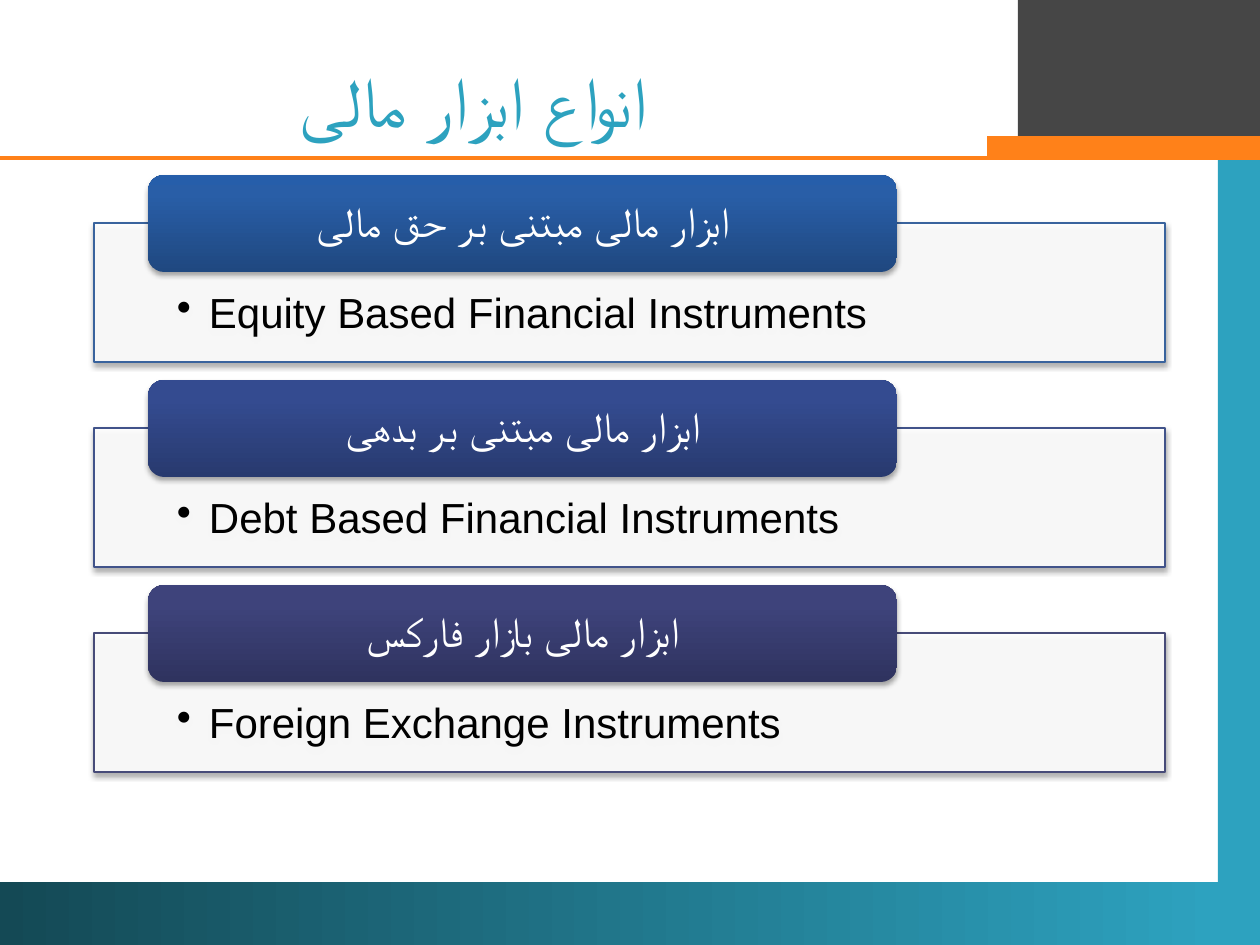
from dataclasses import dataclass

from lxml import etree
from pptx import Presentation
from pptx.dml.color import RGBColor
from pptx.enum.shapes import MSO_CONNECTOR, MSO_SHAPE
from pptx.enum.text import MSO_ANCHOR, PP_ALIGN
from pptx.oxml.ns import qn
from pptx.util import Pt

RECT, ROUND = MSO_SHAPE.RECTANGLE, MSO_SHAPE.ROUNDED_RECTANGLE
STRAIGHT = MSO_CONNECTOR.STRAIGHT
TOP, MIDDLE = MSO_ANCHOR.TOP, MSO_ANCHOR.MIDDLE
LEFT, CENTER = PP_ALIGN.LEFT, PP_ALIGN.CENTER
SCALE = 914400 / 126


@dataclass(frozen=True)
class Theme:
    """Colours and type sizes of the slide."""
    font: str = "Arial"
    title_size: int = 40
    body_size: int = 24
    teal: str = "2DA2BF"
    deep_teal: str = "144955"
    orange: str = "FF8119"
    charcoal: str = "464646"
    white: str = "FFFFFF"
    black: str = "000000"


THEME = Theme()
SECTIONS = [
    ("ابزار مالی مبتنی بر حق مالی", "Equity Based Financial Instruments",
     "39639D", ("1F4880", "295EA7", "265EAA")),
    ("ابزار مالی مبتنی بر بدهی", "Debt Based Financial Instruments",
     "41538A", ("283A6F", "344B90", "324B93")),
    ("ابزار مالی بازار فارکس", "Foreign Exchange Instruments",
     "474B78", ("2F335F", "3E437B", "3D427D")),
]


def px(*values):
    """Turn pixel lengths into a list of EMU lengths."""
    return [round(v * SCALE) for v in values]


def add(parent, tag, **attrs):
    """Append a DrawingML element and return it."""
    return etree.SubElement(parent, qn(tag), {k: str(v) for k, v in attrs.items()})


def add_box(s, box, kind=RECT, fill=None, line=None):
    """Add a preset shape without a shadow."""
    sp = s.shapes.add_shape(kind, *px(*box))
    sp.shadow.inherit = False
    if fill:
        sp.fill.solid()
        sp.fill.fore_color.rgb = RGBColor.from_string(fill)
    if line:
        sp.line.color.rgb = RGBColor.from_string(line)
        sp.line.width = Pt(0.75)
    else:
        sp.line.fill.background()
    return sp


def set_gradient(sp, stops, angle):
    """Fill a shape with (percent, colour) stops along a line."""
    sp.fill.gradient()
    sp.fill.gradient_angle = angle
    stop_list = sp.element.spPr.find(".//" + qn("a:gsLst"))
    for old in list(stop_list):
        stop_list.remove(old)
    for percent, color in stops:
        add(add(stop_list, "a:gs", pos=percent * 1000), "a:srgbClr", val=color)


def set_shadow(sp):
    """Give a shape a soft shadow below it."""
    effects = sp.element.spPr.find(qn("a:effectLst"))
    shadow = add(effects, "a:outerShdw", blurRad=40000, dist=23000,
                 dir=5400000, rotWithShape=0)
    add(add(shadow, "a:srgbClr", val=THEME.black), "a:alpha", val=35000)


def write(sp, text, size=THEME.body_size, color=THEME.black, align=LEFT,
          anchor=TOP, insets=(0, 0, 0, 0), rtl=False, bullet=False, spacing=0.9):
    """Write one formatted paragraph into a shape."""
    tf = sp.text_frame
    tf.word_wrap = True
    tf.vertical_anchor = anchor
    tf.margin_left, tf.margin_top, tf.margin_right, tf.margin_bottom = px(*insets)
    p = tf.paragraphs[0]
    p.alignment, p.line_spacing = align, spacing
    r = p.add_run()
    r.text = text
    r.font.name, r.font.size = THEME.font, Pt(size)
    r.font.color.rgb = RGBColor.from_string(color)
    add(r.font._element, "a:cs", typeface=THEME.font)
    props = p._p.get_or_add_pPr()
    if rtl:
        props.set("rtl", "1")
    if bullet:
        indent, = px(32)
        props.set("marL", str(indent))
        props.set("indent", str(-indent))
        add(props, "a:buChar", char="•")


def add_frame(s, box):
    """Draw the bars, corner block and rule around the slide."""
    x, y, w, h = box
    right, bottom = x + w, y + h
    add_box(s, (right - 42, y + 32, 42, h - 32), fill=THEME.teal)
    footer = add_box(s, (x, bottom - 63, w - 42, 63))
    set_gradient(footer, [(0, THEME.deep_teal), (100, THEME.teal)], 0)
    add_box(s, (right - 242, y, 242, 136), fill=THEME.charcoal)
    rule = s.shapes.add_connector(STRAIGHT, *px(right, y + 158, x, y + 158))
    rule.line.color.rgb = RGBColor.from_string(THEME.orange)
    rule.line.width = Pt(2.25)
    add(rule.element.spPr, "a:effectLst")
    add_box(s, (right - 273, y + 136, 273, 22), fill=THEME.orange)


def add_title(s, box, text):
    """Write the slide title centred in its box."""
    sp = s.shapes.add_textbox(*px(*box))
    write(sp, text, size=THEME.title_size, color=THEME.teal, align=CENTER,
          anchor=MIDDLE, rtl=True, spacing=1.0)


def add_section(s, box, heading, detail, line, shades):
    """Draw a detail panel with a heading tab over its top edge."""
    x, y, w, h = box
    panel = add_box(s, (x, y + 48, w, h - 48), fill=THEME.white, line=line)
    add(panel.element.spPr.find(".//" + qn("a:srgbClr")), "a:alpha", val=90000)
    set_shadow(panel)
    write(panel, detail, insets=(83, 69, 83, 24), bullet=True)
    tab = add_box(s, (x + 54, y, w * 7 // 10, 97), ROUND)
    set_gradient(tab, zip((0, 80, 100), shades), 90)
    set_shadow(tab)
    write(tab, heading, color=THEME.white, align=CENTER, anchor=MIDDLE,
          insets=(28, 0, 28, 0), rtl=True)


def add_sections(s, box, sections, gap=18):
    """Stack the sections in equal rows."""
    x, y, w, h = box
    row = (h - gap * (len(sections) - 1)) // len(sections)
    for i, section in enumerate(sections):
        add_section(s, (x, y + i * (row + gap), w, row), *section)


def main():
    """Build the slide and save it."""
    prs = Presentation()
    prs.slide_width, prs.slide_height = px(1260, 945)
    s = prs.slides.add_slide(prs.slide_layouts[6])
    add_frame(s, (0, 0, 1260, 945))
    add_title(s, (0, 63, 945, 73), "انواع ابزار مالی")
    add_sections(s, (94, 175, 1071, 597), SECTIONS)
    prs.save("out.pptx")


if __name__ == "__main__":
    main()
